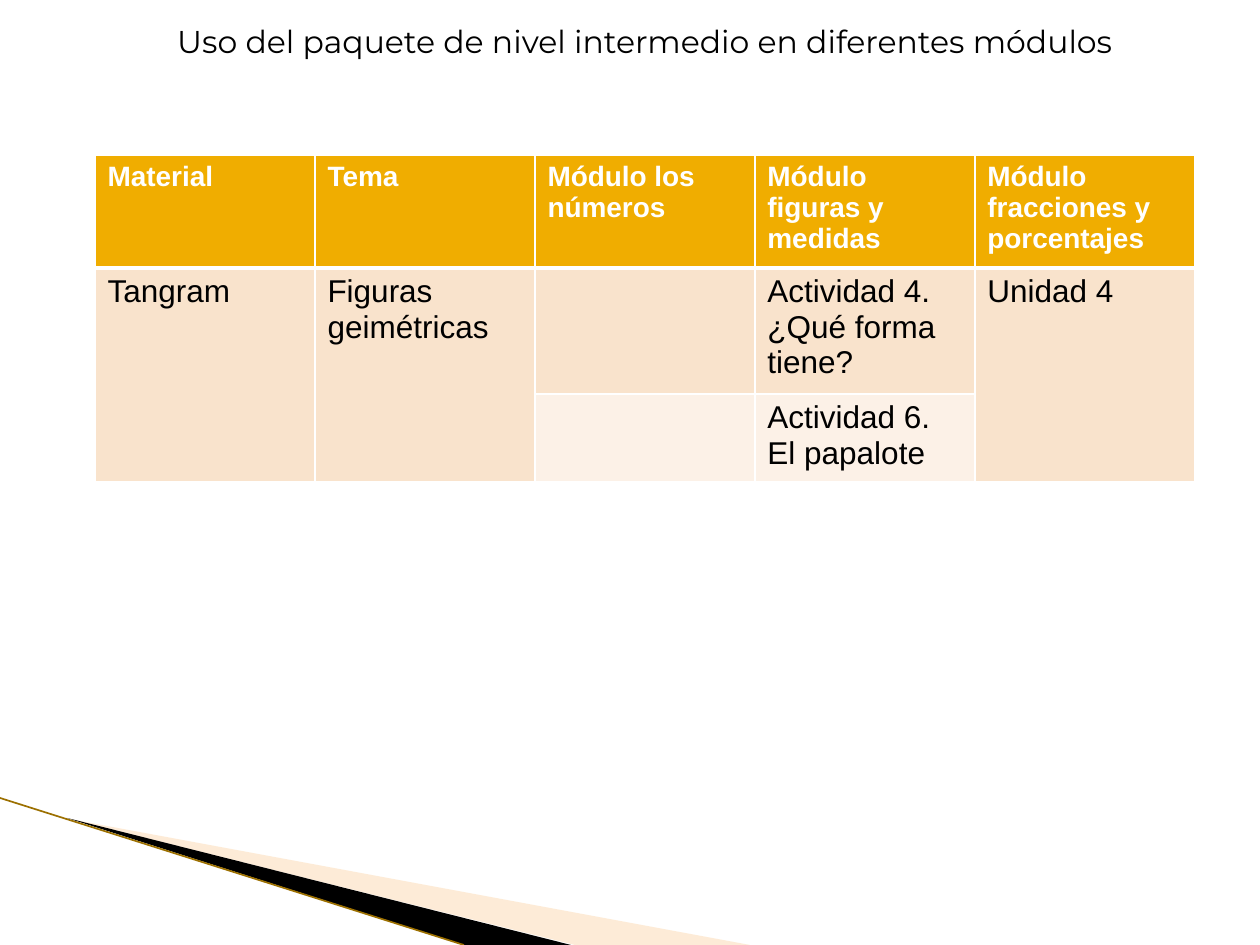
from dataclasses import dataclass

from lxml.etree import SubElement
from pptx import Presentation
from pptx.dml.color import RGBColor as RGB
from pptx.enum.shapes import MSO_CONNECTOR as CONN
from pptx.enum.text import MSO_ANCHOR as ANCHOR, PP_ALIGN as ALIGN
from pptx.oxml.ns import qn
from pptx.util import Pt

PX = 914400 / 126


@dataclass(frozen=True)
class Theme:
    black: RGB = RGB(0, 0, 0)
    white: RGB = RGB(255, 255, 255)
    header: RGB = RGB.from_string("F0AD00")
    band: RGB = RGB.from_string("F9E3CC")
    band_light: RGB = RGB.from_string("FCF1E7")
    wedge: RGB = RGB.from_string("FCCF9B")
    edge: RGB = RGB.from_string("9C7000")
    title_font: str = "Montserrat"
    table_font: str = "Arial"
    title_size: int = 18
    header_size: int = 16
    body_size: int = 18


theme = Theme()


def px(n):
    return round(n * PX)


def set_border(cell, side, width):
    """Give one side (L, R, T or B) of a cell a white line, width in points."""
    ln = SubElement(cell._tc.get_or_add_tcPr(), qn(f"a:ln{side}"), w=str(Pt(width)))
    fill = SubElement(ln, qn("a:solidFill"))
    SubElement(fill, qn("a:srgbClr"), val=str(theme.white))


prs = Presentation()
prs.slide_width, prs.slide_height = px(1260), px(945)
s = prs.slides.add_slide(prs.slide_layouts[5])

# Corner decoration
wedges = [
    ([(69, 819), (750, 945), (575, 945)], theme.wedge, 40),
    ([(67, 818), (571, 945), (464, 945)], theme.black, 100),
]
for points, color, opacity in wedges:
    fb = s.shapes.build_freeform(*points[0], scale=PX)
    fb.add_line_segments(points[1:], close=True)
    sp = fb.convert_to_shape()
    sp.shadow.inherit = False
    sp.fill.solid()
    sp.fill.fore_color.rgb = color
    sp.line.fill.background()
    if opacity < 100:
        clr = sp._element.spPr.find(qn("a:solidFill")).find(qn("a:srgbClr"))
        SubElement(clr, qn("a:alpha"), val=str(opacity * 1000))

edge = s.shapes.add_connector(CONN.STRAIGHT, px(0), px(798), px(464), px(945))
edge.line.color.rgb = theme.edge
edge.line.width = Pt(0.95)
SubElement(edge._element.spPr, qn("a:effectLst"))

# Title
title = s.shapes.title
title.left, title.top, title.width, title.height = px(144), px(16), px(1002), px(89)
tf = title.text_frame
tf.text = "Uso del paquete de nivel intermedio en diferentes módulos"
tf.word_wrap = True
tf.vertical_anchor = ANCHOR.TOP
p = tf.paragraphs[0]
p.alignment = ALIGN.CENTER
p.font.name = theme.title_font
p.font.size = Pt(theme.title_size)
p.font.color.rgb = theme.black

# Table of modules
rows = [
    ["Material", "Tema", "Módulo los números", "Módulo figuras y medidas",
     "Módulo fracciones y porcentajes"],
    ["Tangram", "Figuras geimétricas", "", "Actividad 4.\n¿Qué forma tiene?", "Unidad 4"],
    ["", "", "", "Actividad 6. El papalote", ""],
]
row_heights = [113, 126, 88]
row_fills = [theme.header, theme.band, theme.band_light]
col_width = 220
merged_cols = [0, 1, 4]

table = s.shapes.add_table(3, 5, px(95), px(155), px(5 * col_width),
                           px(sum(row_heights))).table
for col in table.columns:
    col.width = px(col_width)
for i, texts in enumerate(rows):
    table.rows[i].height = px(row_heights[i])
    is_header = i == 0
    for j, text in enumerate(texts):
        cell = table.cell(i, j)
        cell.text = text
        set_border(cell, "L", 1)
        set_border(cell, "R", 1)
        set_border(cell, "T", 3 if i == 1 else 1)
        set_border(cell, "B", 3 if is_header else 1)
        cell.fill.solid()
        cell.fill.fore_color.rgb = row_fills[i]
        for p in cell.text_frame.paragraphs:
            p.font.name = theme.table_font
            p.font.size = Pt(theme.header_size if is_header else theme.body_size)
            p.font.bold = is_header
            p.font.color.rgb = theme.white if is_header else theme.black
for j in merged_cols:
    table.cell(1, j).merge(table.cell(2, j))

prs.save("out.pptx")
